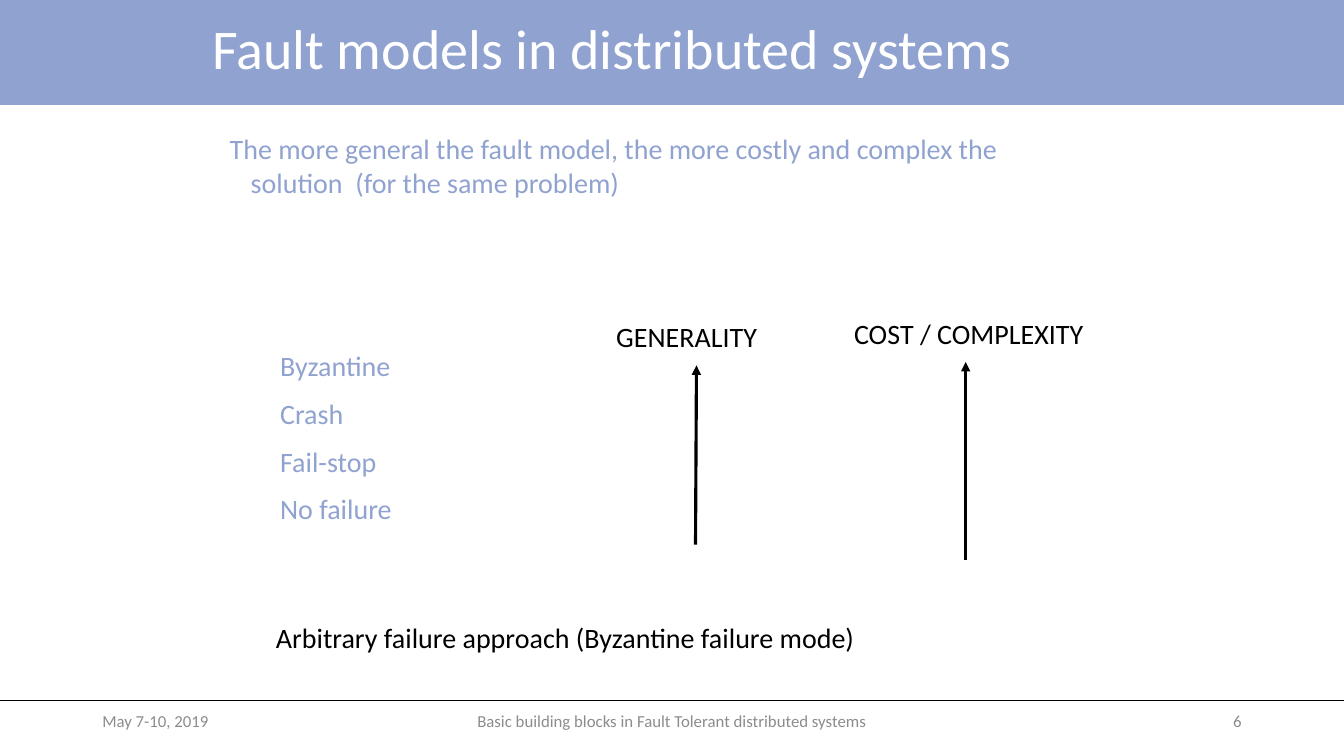
import pptx
import pptx.util
import pptx.dml.color
import pptx.enum.shapes
import pptx.enum.text
import pptx.oxml.ns
from dataclasses import dataclass
from lxml import etree

Pt = pptx.util.Pt
ALIGN = pptx.enum.text.PP_ALIGN
ANCHOR = pptx.enum.text.MSO_ANCHOR


@dataclass(frozen=True)
class Theme:
    font: str = "Calibri"
    accent: str = "90A2CF"
    white: str = "FFFFFF"
    black: str = "000000"
    muted: str = "8C8C8C"
    title_size: int = 40
    body_size: int = 20
    footer_size: int = 12


THEME = Theme()
SLIDE_W, SLIDE_H = 960, 540


def rgb(value):
    return pptx.dml.color.RGBColor.from_string(value)


def add_text(slide, box, lines, size, color, align=ALIGN.LEFT,
             anchor=ANCHOR.TOP, wrap=True, gap=0):
    """Place one paragraph per line in box = (left, top, width, height)."""
    frame = slide.shapes.add_textbox(*map(Pt, box)).text_frame
    frame.word_wrap = wrap
    frame.vertical_anchor = anchor
    for index, line in enumerate(lines):
        paragraph = frame.paragraphs[0] if index == 0 else frame.add_paragraph()
        paragraph.alignment = align
        if index:
            paragraph.space_before = Pt(gap)
        run = paragraph.add_run()
        run.text = line
        run.font.name = THEME.font
        run.font.size = Pt(size)
        run.font.color.rgb = rgb(color)
    return frame


def add_line(slide, start, end, width, arrow=False):
    line = slide.shapes.add_connector(
        pptx.enum.shapes.MSO_CONNECTOR.STRAIGHT, *map(Pt, start + end))
    line.line.color.rgb = rgb(THEME.black)
    line.line.width = Pt(width)
    qn = pptx.oxml.ns.qn
    if arrow:
        etree.SubElement(line.line._get_or_add_ln(), qn("a:tailEnd"), type="triangle")
    etree.SubElement(line._element.spPr, qn("a:effectLst"))


def add_header(slide, box, title):
    left, top, width, height = box
    # Coloured band
    band = slide.shapes.add_shape(
        pptx.enum.shapes.MSO_SHAPE.RECTANGLE, *map(Pt, box))
    band.shadow.inherit = False
    band.fill.solid()
    band.fill.fore_color.rgb = rgb(THEME.accent)
    band.line.fill.background()
    # Title, centred a little left of the band's middle
    heading = add_text(slide, (left, top, width - 86, height - 1.5), [title],
                       THEME.title_size, THEME.white, ALIGN.CENTER, ANCHOR.MIDDLE)
    heading.paragraphs[0].line_spacing = 0.9


def add_footer(slide, box, date, talk, number):
    left, top, width, height = box
    margin, side, middle = 66, 216, 324
    add_line(slide, (left, top), (left + width, top), 0.5)
    parts = [
        (left + margin, side, date, ALIGN.LEFT),
        (left + (width - middle) / 2, middle, talk, ALIGN.CENTER),
        (left + width - margin - side, side, number, ALIGN.RIGHT),
    ]
    for x, part_width, text, align in parts:
        add_text(slide, (x, top, part_width, height), [text],
                 THEME.footer_size, THEME.muted, align, ANCHOR.MIDDLE)


def add_models(slide, box, statement, models, approach):
    left, top, width, height = box
    # Statement with a hanging indent
    claim = add_text(slide, (left, top, width, 56), [statement],
                     THEME.body_size, THEME.accent)
    properties = claim.paragraphs[0]._p.get_or_add_pPr()
    properties.set("marL", str(Pt(15)))
    properties.set("indent", str(-Pt(15)))
    # Fault models, most general first
    add_text(slide, (left + 36, top + 155, 200, 136), models,
             THEME.body_size, THEME.accent, gap=10)
    # Closing remark
    add_text(slide, (left + 33, top + height - 32, 437, 32), [approach],
             THEME.body_size, THEME.black, wrap=False)


def add_scale(slide, box, label, axis_x, slant=0):
    """Label on top of the box, with an arrow rising to it from the bottom."""
    left, top, width, height = box
    add_text(slide, (left, top, width, 32), [label], THEME.body_size,
             THEME.black, ALIGN.CENTER, wrap=False)
    add_line(slide, (axis_x, top + height), (axis_x + slant, top + 36),
             2.25, arrow=True)


def main():
    deck = pptx.Presentation()
    deck.slide_width, deck.slide_height = Pt(SLIDE_W), Pt(SLIDE_H)
    slide = deck.slides.add_slide(deck.slide_layouts[6])

    add_header(slide, (0, 0, SLIDE_W, 75), "Fault models in distributed systems")
    add_footer(slide, (0, 500.4, SLIDE_W, 29), "May 7-10, 2019",
               "Basic building blocks in Fault Tolerant distributed systems", "6")
    add_models(
        slide, (157, 90.6, 607, 381),
        "The more general the fault model, the more costly and complex "
        "the solution  (for the same problem)",
        ["Byzantine", "Crash", "Fail-stop", "No failure"],
        "Arbitrary failure approach (Byzantine failure mode)")
    add_scale(slide, (432.5, 225, 116, 164), "GENERALITY", 496.8, slant=0.7)
    add_scale(slide, (602, 222.6, 180, 177.7), "COST / COMPLEXITY", 689.8)

    deck.save("out.pptx")


if __name__ == "__main__":
    main()
